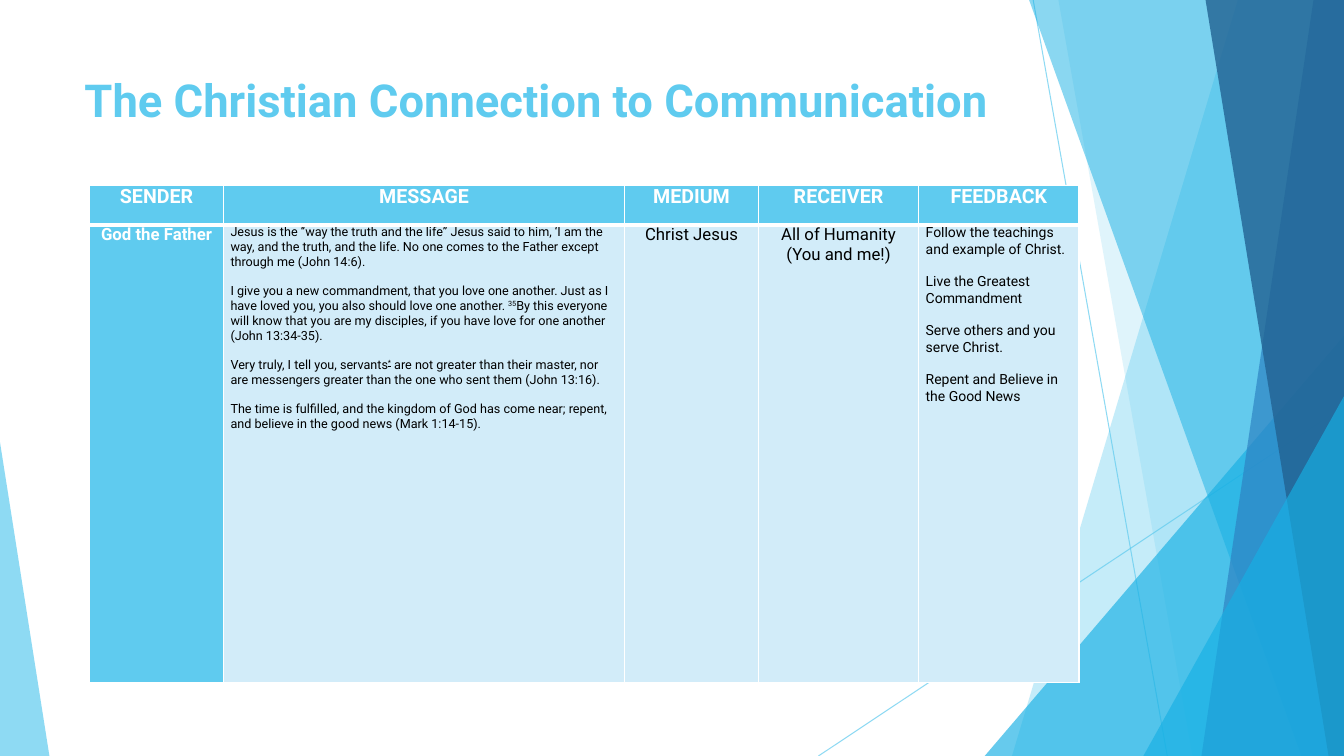
import pptx
import pptx.dml.color
import pptx.enum.shapes
import pptx.enum.text
import pptx.oxml
import pptx.oxml.ns
import pptx.util
from lxml import etree

Pt = pptx.util.Pt
qn = pptx.oxml.ns.qn
Align = pptx.enum.text.PP_ALIGN

COLORS = {
    "white": "FFFFFF", "black": "000000", "sky": "5FCBEF", "pale": "D2ECF9",
    "cyan": "17B0E4", "blue": "2E83C3", "navy": "226292",
}
WIDTH, HEIGHT = 960, 540


def rgb(name):
    return pptx.dml.color.RGBColor.from_string(COLORS[name])


def set_opacity(shape, percent):
    for color in shape._element.spPr.iter(qn("a:srgbClr")):
        etree.SubElement(color, qn("a:alpha")).set("val", str(percent * 1000))


def write(paragraph, text, size=12, color="black", bold=False, underline=False, superscript=False):
    run = paragraph.add_run()
    run.text = text
    font = run.font
    font.name = "Roboto"
    font.size = Pt(size)
    font.bold = bold
    font.color.rgb = rgb(color)
    if underline:
        font.underline = True
    if superscript:
        run._r.get_or_add_rPr().set("baseline", "30000")


class SlideBuilder:
    def __init__(self, slide):
        self.shapes = slide.shapes

    def paint(self, shape, color, opacity):
        shape.shadow.inherit = False
        shape.fill.solid()
        shape.fill.fore_color.rgb = rgb(color)
        shape.line.fill.background()
        set_opacity(shape, opacity)

    def line(self, x1, y1, x2, y2, color, opacity):
        connector = self.shapes.add_connector(
            pptx.enum.shapes.MSO_CONNECTOR.STRAIGHT, Pt(x1), Pt(y1), Pt(x2), Pt(y2))
        connector.line.width = Pt(0.75)
        connector.line.color.rgb = rgb(color)
        set_opacity(connector, opacity)
        etree.SubElement(connector._element.spPr, qn("a:effectLst"))

    def band(self, top_x, bottom_x, color, opacity):
        """Fill from a slanted left edge to the right side of the slide."""
        builder = self.shapes.build_freeform(Pt(top_x), 0)
        corners = [(WIDTH, 0), (WIDTH, HEIGHT), (bottom_x, HEIGHT)]
        builder.add_line_segments([(Pt(x), Pt(y)) for x, y in corners], close=True)
        self.paint(builder.convert_to_shape(), color, opacity)

    def corner_triangle(self, left, top, width, apex, color, opacity):
        """Stand a triangle on the bottom edge of the slide."""
        shape = self.shapes.add_shape(
            pptx.enum.shapes.MSO_SHAPE.ISOSCELES_TRIANGLE,
            Pt(left), Pt(top), Pt(width), Pt(HEIGHT - top))
        shape.adjustments[0] = apex
        self.paint(shape, color, opacity)

    def title(self, text, left, top, width, height):
        frame = self.shapes.add_textbox(Pt(left), Pt(top), Pt(width), Pt(height)).text_frame
        frame.word_wrap = True
        write(frame.paragraphs[0], text, size=32.4, color="sky", bold=True)

    def table(self, left, top, widths, heights):
        table = self.shapes.add_table(
            len(heights), len(widths), Pt(left), Pt(top), Pt(sum(widths)), Pt(sum(heights))).table
        for column, width in zip(table.columns, widths):
            column.width = Pt(width)
        for row, height in zip(table.rows, heights):
            row.height = Pt(height)
        return table

    def cell(self, cell, paragraphs, fill, borders, align=Align.CENTER, gap=0, **style):
        """Fill a cell; a paragraph is a string or a list of (text, format) pairs."""
        cell.margin_left = cell.margin_right = Pt(5)
        cell.margin_top = cell.margin_bottom = 0
        cell.fill.solid()
        cell.fill.fore_color.rgb = rgb(fill)
        for index, content in enumerate(paragraphs):
            frame = cell.text_frame
            paragraph = frame.add_paragraph() if index else frame.paragraphs[0]
            paragraph.alignment = align
            if index and gap:
                paragraph.space_before = Pt(gap)
            pieces = [(content, {})] if isinstance(content, str) else content
            for text, extra in pieces:
                write(paragraph, text, **style, **extra)
        properties = cell._tc.get_or_add_tcPr()
        for index, (side, width) in enumerate(borders.items()):
            border = etree.Element(qn(f"a:ln{side}"), w=str(Pt(width)))
            solid = etree.SubElement(border, qn("a:solidFill"))
            etree.SubElement(solid, qn("a:srgbClr")).set("val", COLORS["white"])
            properties.insert(index, border)


def draw_background(builder):
    builder.line(738, 0, 833.8, HEIGHT, "sky", 70)
    builder.line(WIDTH, 290.2, 584.6, HEIGHT, "sky", 70)
    builder.band(884.2, 722.9, "sky", 36)
    builder.band(756, 851.8, "sky", 20)
    builder.corner_triangle(703.4, 239.8, 256.6, 1, "cyan", 66)
    builder.band(735.1, 929.5, "cyan", 50)
    builder.band(938.2, 858.2, "blue", 70)
    builder.band(861.1, 949, "navy", 80)
    builder.corner_triangle(816.7, 283, 143.3, 1, "cyan", 66)
    builder.corner_triangle(0, 316, 35.3, 0, "sky", 70)


HEADINGS = ["SENDER", "MESSAGE", "MEDIUM", "RECEIVER", "FEEDBACK"]
MESSAGES = [
    "Jesus is the ‘’way the truth and the life” Jesus said to him, ‘I am the way, and the truth, "
    "and the life. No one comes to the Father except through me (John 14:6).",
    [("I give you a new commandment, that you love one another. Just as I have loved you, "
      "you also should love one another. ", {}),
     ("35", {"superscript": True}),
     ("By this everyone will know that you are my disciples, if you have love for one another "
      "(John 13:34-35).", {})],
    [("Very truly, I tell you, servants", {}),
     ("*", {"underline": True, "superscript": True}),
     (" are not greater than their master, nor are messengers greater than the one who sent them "
      "(John 13:16).", {})],
    "The time is fulfilled, and the kingdom of God has come near; repent, and believe in the good "
    "news (Mark 1:14-15).",
]
FEEDBACK = [
    "Follow the teachings and example of Christ.",
    "Live the Greatest Commandment",
    "Serve others and you serve Christ.",
    "Repent and Believe in the Good News",
]
BODY = [
    (["God the Father"], {"fill": "sky", "color": "white", "bold": True}),
    (MESSAGES, {"size": 9, "align": Align.LEFT, "gap": 10.5}),
    (["Christ Jesus"], {}),
    (["All of Humanity", "(You and me!)"], {}),
    (FEEDBACK, {"size": 10, "align": Align.LEFT, "gap": 11.7}),
]


def main():
    presentation = pptx.Presentation()
    presentation.slide_width, presentation.slide_height = Pt(WIDTH), Pt(HEIGHT)
    slide = presentation.slides.add_slide(presentation.slide_layouts[6])
    builder = SlideBuilder(slide)
    draw_background(builder)
    builder.title("The Christian Connection to Communication", 53.3, 48.2, 676.8, 108)

    table = builder.table(64.1, 132.5, [95.6, 286.5, 95.6, 114.5, 114.5], [28.1, 326.9])
    header_borders = {"L": 1, "R": 1, "T": 1, "B": 3}
    body_borders = {"L": 1, "R": 1, "T": 3, "B": 1}
    for column, (heading, (paragraphs, style)) in enumerate(zip(HEADINGS, BODY)):
        builder.cell(table.cell(0, column), [heading], "sky", header_borders,
                     size=14, color="white", bold=True)
        builder.cell(table.cell(1, column), paragraphs, borders=body_borders,
                     **{"fill": "pale", **style})
    presentation.save("out.pptx")


if __name__ == "__main__":
    main()
